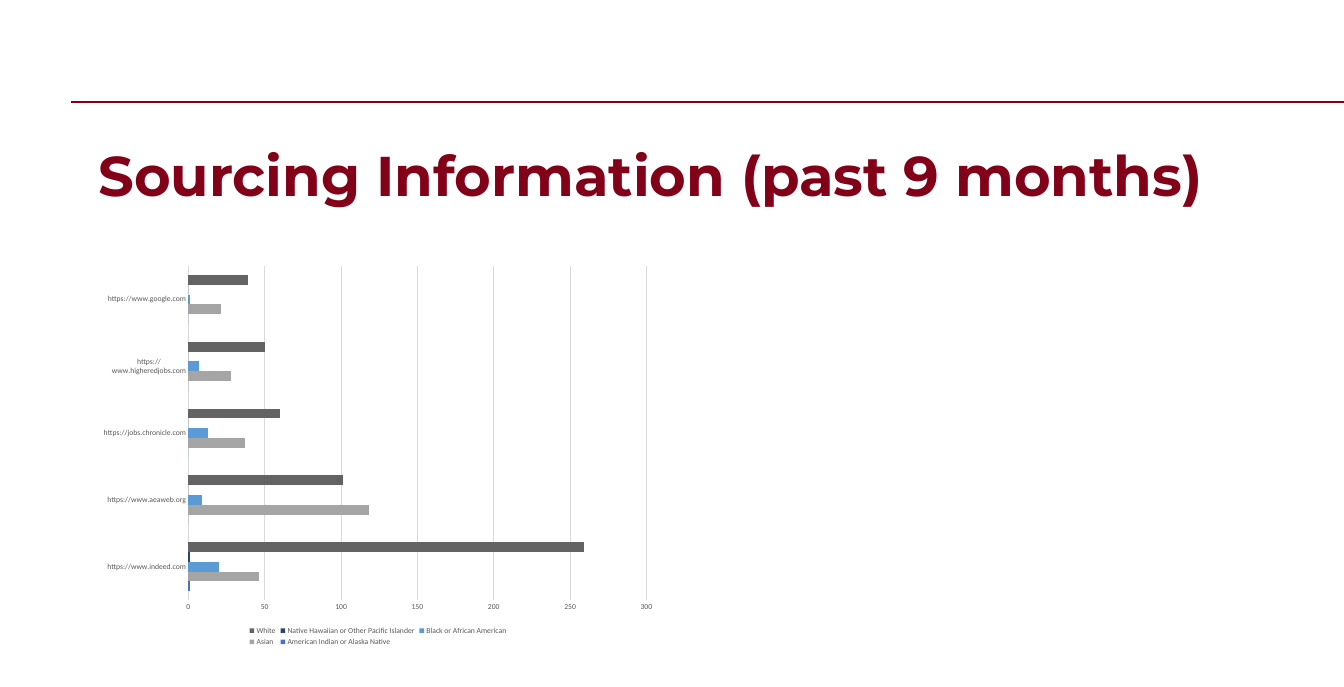
"""Build the sourcing information slide with its clustered bar chart."""
from dataclasses import dataclass

import pptx
import pptx.chart.data
import pptx.dml.color
import pptx.enum.chart
import pptx.enum.shapes
import pptx.enum.text
import pptx.oxml
import pptx.util

PX = 9525
MAROON = "830019"
GRAY = "595959"
LIGHT = "D9D9D9"
SITES = [
    "https://www.indeed.com",
    "https://www.aeaweb.org",
    "https://jobs.chronicle.com",
    "https://www.higheredjobs.com",
    "https://www.google.com",
]


@dataclass(frozen=True)
class Box:
    """A rectangle in px."""
    x: int
    y: int
    w: int
    h: int

    def emu(self) -> list[int]:
        """Return left, top, width and height in EMU."""
        return [px(v) for v in (self.x, self.y, self.w, self.h)]


@dataclass(frozen=True)
class Group:
    """Applicants of one group, counted by site."""
    name: str
    counts: tuple[int, ...]
    color: str


GROUPS = [
    Group("American Indian or Alaska Native", (1, 0, 0, 0, 0), "4472C4"),
    Group("Asian", (46, 118, 37, 28, 21), "A5A5A5"),
    Group("Black or African American", (20, 9, 13, 7, 1), "5B9BD5"),
    Group("Native Hawaiian or Other Pacific Islander", (1, 0, 0, 0, 0), "264478"),
    Group("White", (259, 101, 60, 50, 39), "636363"),
]


def px(n: int) -> pptx.util.Emu:
    """Turn px into EMU."""
    return pptx.util.Emu(n * PX)


def rgb(color: str) -> pptx.dml.color.RGBColor:
    """Turn a hex string into a colour."""
    return pptx.dml.color.RGBColor.from_string(color)


def set_font(font, name: str, size: float, color: str, bold: bool = False) -> None:
    """Format a font."""
    font.name = name
    font.size = pptx.util.Pt(size)
    font.bold = bold
    font.color.rgb = rgb(color)


def set_line(line, color: str, width: float) -> None:
    """Format a line."""
    line.color.rgb = rgb(color)
    line.width = pptx.util.Pt(width)


def add_rule(s, x1: int, x2: int, y: int) -> None:
    """Draw a horizontal rule."""
    kind = pptx.enum.shapes.MSO_CONNECTOR.STRAIGHT
    rule = s.shapes.add_connector(kind, px(x1), px(y), px(x2), px(y))
    set_line(rule.line, MAROON, 1.75)
    sp_pr = rule._element.spPr
    sp_pr.append(pptx.oxml.parse_xml(
        '<a:effectLst xmlns:a="http://schemas.openxmlformats.org/drawingml/2006/main"/>'))


def fill_title(s, text: str, box: Box) -> None:
    """Place and write the title."""
    sp = s.shapes.title
    sp.left, sp.top, sp.width, sp.height = box.emu()
    tf = sp.text_frame
    tf.word_wrap = True
    tf.auto_size = pptx.enum.text.MSO_AUTO_SIZE.NONE
    tf.vertical_anchor = pptx.enum.text.MSO_ANCHOR.MIDDLE
    p = tf.paragraphs[0]
    p.alignment = pptx.enum.text.PP_ALIGN.LEFT
    p.line_spacing = 0.9
    r = p.add_run()
    r.text = text
    set_font(r.font, "Montserrat", 66, MAROON, bold=True)


def format_axis(axis) -> None:
    """Give an axis small gray labels and no tick marks."""
    axis.major_tick_mark = pptx.enum.chart.XL_TICK_MARK.NONE
    axis.minor_tick_mark = pptx.enum.chart.XL_TICK_MARK.NONE
    set_font(axis.tick_labels.font, "Calibri", 9, GRAY)


def add_bars(s, sites: list[str], groups: list[Group], box: Box) -> None:
    """Draw the clustered bar chart."""
    data = pptx.chart.data.CategoryChartData()
    data.categories = sites
    for group in groups:
        data.add_series(group.name, group.counts)
    kind = pptx.enum.chart.XL_CHART_TYPE.BAR_CLUSTERED
    chart = s.shapes.add_chart(kind, *box.emu(), data).chart
    set_font(chart.font, "Calibri", 10, "000000")
    chart.has_title = False

    plot = chart.plots[0]
    plot.gap_width = 182
    plot.vary_by_categories = False
    for series, group in zip(plot.series, groups):
        series.invert_if_negative = False
        series.format.fill.solid()
        series.format.fill.fore_color.rgb = rgb(group.color)

    for axis in (chart.category_axis, chart.value_axis):
        format_axis(axis)
    set_line(chart.category_axis.format.line, LIGHT, 0.75)
    values = chart.value_axis
    values.minimum_scale, values.maximum_scale, values.major_unit = 0, 300, 50
    values.format.line.fill.background()
    values.has_major_gridlines = True
    set_line(values.major_gridlines.format.line, LIGHT, 0.75)

    chart.has_legend = True
    chart.legend.position = pptx.enum.chart.XL_LEGEND_POSITION.BOTTOM
    chart.legend.include_in_layout = False
    set_font(chart.legend.font, "Calibri", 9, GRAY)


def main() -> None:
    """Build and save the slide."""
    prs = pptx.Presentation()
    prs.slide_width, prs.slide_height = px(2112), px(1080)
    s = prs.slides.add_slide(prs.slide_layouts.get_by_name("Title Only"))
    add_rule(s, 112, 2112, 160)
    fill_title(s, "Sourcing Information (past 9 months)", Box(145, 177, 1822, 208))
    add_bars(s, SITES, GROUPS, Box(145, 406, 898, 614))
    prs.save("out.pptx")


if __name__ == "__main__":
    main()
